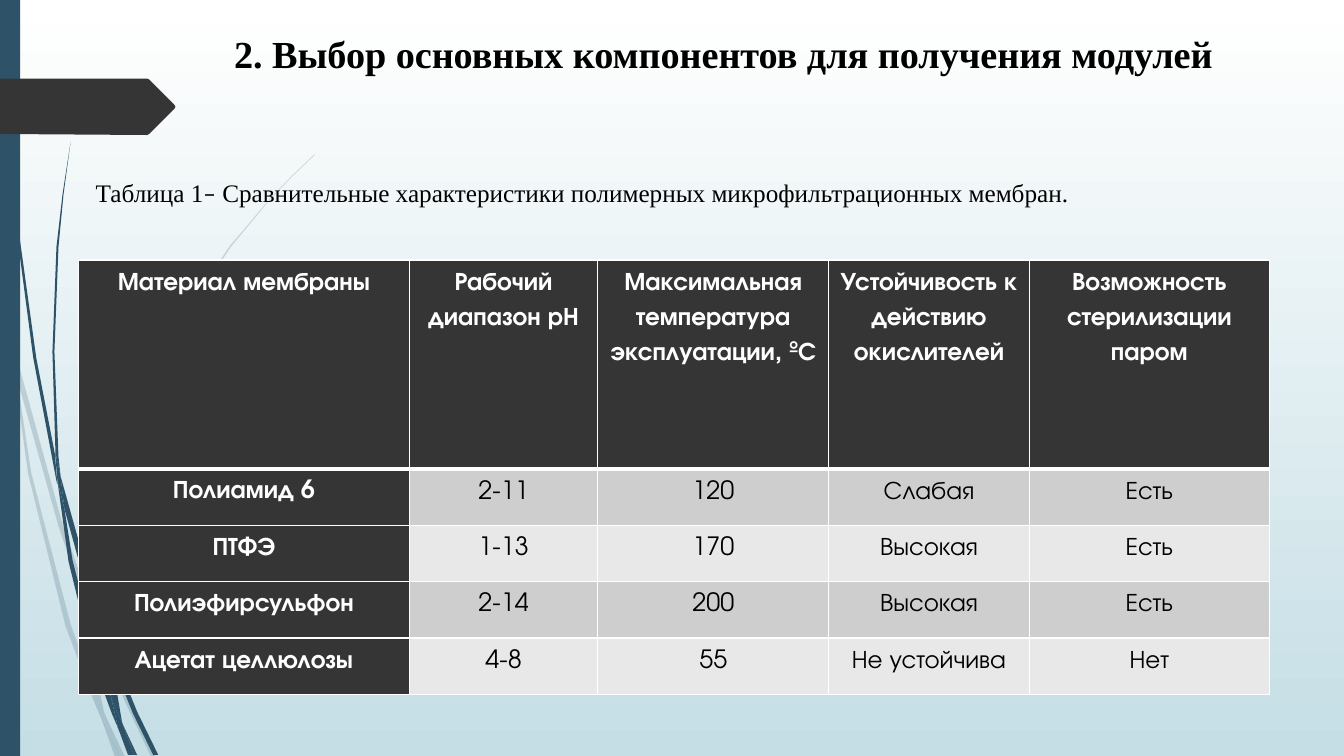
from lxml import etree
from pptx import Presentation
from pptx.dml.color import RGBColor
from pptx.enum.shapes import MSO_SHAPE
from pptx.enum.text import MSO_ANCHOR, MSO_AUTO_SIZE, PP_ALIGN
from pptx.oxml.ns import qn
from pptx.util import Pt

RECT = MSO_SHAPE.RECTANGLE
CENTER, LEFT = PP_ALIGN.CENTER, PP_ALIGN.LEFT
TOP, MIDDLE = MSO_ANCHOR.TOP, MSO_ANCHOR.MIDDLE
NONE, GROW = MSO_AUTO_SIZE.NONE, MSO_AUTO_SIZE.SHAPE_TO_FIT_TEXT
PX = 9144  # 100 px to the inch

THEME = {
    "sky": ("FFFFFF", "C5DEE5"), "blue": "2E5369", "dark": "353535",
    "bands": ("CECECE", "E8E8E8"), "ink": "000000", "white": "FFFFFF",
    "serif": "Times New Roman", "sans": "TeX Gyre Adventor", "dash": "Calibri",
    "title": 27.3, "body": 18, "thin": 1, "thick": 3,
}

SIZE = (1333, 750)
TITLE = "2. Выбор основных компонентов для получения модулей"
TITLE_BOX = (177, 25, 1081, 59)
CAPTION = [
    ("Таблица 1", "serif"), ("–", "dash"),
    (" Сравнительные характеристики полимерных микрофильтрационных мембран.", "serif"),
]
CAPTION_BOX = (85, 171, 1052, 40)

ROWS = [
    ("Материал мембраны", "Рабочий диапазон рН", "Максимальная температура эксплуатации, ºС",
     "Устойчивость к действию окислителей", "Возможность стерилизации паром"),
    ("Полиамид 6", "2-11", "120", "Слабая", "Есть"),
    ("ПТФЭ", "1-13", "170", "Высокая", "Есть"),
    ("Полиэфирсульфон", "2-14", "200", "Высокая", "Есть"),
    ("Ацетат целлюлозы", "4-8", "55", "Не устойчива", "Нет"),
]
TABLE_AT = (78, 258)
WIDTHS = (328, 187, 229, 199, 238)
HEAD_H, ROW_H = 207, 56
PAD = 7

BAR = (0, 0, 20, 750)
ARROW = (0, 78, 146, 78, 148, 79, 173, 104, 174, 106, 173, 108, 148, 133, 146, 134, 0, 133)

# Outlines as x, y pairs
PALE = [
    (11, 350, 9, 322, 0, 282, 0, 299, 10, 344),
    (58, 522, 84, 599, 85, 586, 62, 520, 14, 345, 17, 376),
    (92, 607, 88, 596, 88, 610, 123, 694, 150, 751, 155, 751, 127, 692),
    (119, 751, 124, 751, 105, 711),
    (93, 683, 70, 619, 31, 469, 17, 376, 11, 350, 28, 470, 65, 621, 92, 693,
     101, 714, 99, 707),
    (84, 599, 87, 646, 93, 683, 96, 692, 105, 711, 103, 706, 91, 646, 88, 610, 88, 608),
    (88, 584, 110, 462, 160, 349, 229, 245, 268, 198, 290, 175, 312, 154, 312, 153,
     289, 175, 268, 197, 228, 244, 158, 348, 107, 461, 85, 584, 85, 586, 88, 596),
    (101, 714, 114, 751, 119, 751),
    (88, 608, 88, 610, 88, 596, 85, 586, 84, 599),
    (96, 692, 93, 683, 99, 707, 101, 714, 119, 751, 105, 711),
]
DEEP = [
    (7, 110, 17, 233, 33, 355, 56, 477, 57, 481, 55, 457, 55, 453, 36, 355, 19, 232,
     8, 109, 5, 48, 4, 0, 3, 0, 4, 48),
    (88, 592, 106, 645, 106, 633, 106, 631, 93, 590, 60, 472, 64, 505),
    (113, 649, 110, 641, 111, 656, 132, 708, 152, 749, 157, 749, 136, 706),
    (110, 691, 98, 657, 72, 556, 64, 505, 57, 477, 68, 557, 93, 659, 111, 708,
     117, 722, 116, 717),
    (60, 472, 58, 453, 54, 349, 58, 245, 63, 193, 70, 141, 62, 193, 56, 245,
     52, 349, 55, 449),
    (133, 749, 136, 749, 122, 719),
    (57, 477, 64, 505, 60, 472, 55, 449, 55, 453),
    (111, 633, 125, 552, 158, 476, 205, 406, 231, 374, 245, 359, 261, 344, 260, 344,
     245, 358, 231, 373, 204, 405, 156, 474, 122, 551, 106, 631, 110, 641),
    (117, 722, 127, 749, 131, 749),
    (106, 645, 110, 691, 116, 706, 122, 719, 121, 716, 111, 656, 109, 651),
    (106, 645, 109, 651, 111, 656, 110, 641, 106, 631, 106, 633),
    (116, 706, 110, 691, 116, 717, 117, 722, 130, 749, 133, 749, 122, 719),
]


def apply(thing, values):
    for name, value in values.items():
        setattr(thing, name, value)


def scale(lengths):
    return [n * PX for n in lengths]


def paint(shape, color, alpha=None):
    """Give a shape a plain fill, no line and no shadow."""
    shape.shadow.inherit = False
    shape.line.fill.background()
    shape.fill.solid()
    shape.fill.fore_color.rgb = RGBColor.from_string(color)
    if alpha:
        tint = shape.fill._xPr.find(".//" + qn("a:srgbClr"))
        etree.SubElement(tint, qn("a:alpha"), val=str(alpha * 1000))


def outline(shapes, flat, color, alpha=None):
    dots = list(zip(flat[::2], flat[1::2]))
    pen = shapes.build_freeform(*dots[0], scale=PX)
    pen.add_line_segments(dots[1:], close=True)
    paint(pen.convert_to_shape(), color, alpha)


def write(para, text, face, size, color, bold=False):
    run = para.add_run()
    run.text = text
    apply(run.font, {"name": THEME[face], "size": Pt(size), "bold": bold})
    run.font.color.rgb = RGBColor.from_string(THEME[color])


def add_text(slide, box, runs, size, align, frame, bold=False):
    body = slide.shapes.add_textbox(*scale(box)).text_frame
    apply(body, {"word_wrap": True, **frame})
    para = body.paragraphs[0]
    para.alignment = align
    for text, face in runs:
        write(para, text, face, THEME[size], "ink", bold)


def edge(cell, widths):
    """Draw the cell's borders; widths maps a side to points."""
    props = cell._tc.get_or_add_tcPr()
    for side, width in widths.items():
        line = etree.SubElement(props, qn("a:ln" + side), w=str(Pt(width)))
        fill = etree.SubElement(line, qn("a:solidFill"))
        etree.SubElement(fill, qn("a:srgbClr"), val=THEME["white"])


def add_grid(slide):
    heights = [HEAD_H] + [ROW_H] * (len(ROWS) - 1)
    box = scale((*TABLE_AT, sum(WIDTHS), sum(heights)))
    table = slide.shapes.add_table(len(ROWS), len(WIDTHS), *box).table
    for col, width in zip(table.columns, scale(WIDTHS)):
        col.width = width
    thin, thick = THEME["thin"], THEME["thick"]
    for r, (texts, height) in enumerate(zip(ROWS, scale(heights))):
        table.rows[r].height = height
        for c, text in enumerate(texts):
            cell = table.cell(r, c)
            head = r == 0 or c == 0
            apply(cell, {"margin_left": PAD * PX, "margin_right": PAD * PX,
                         "margin_top": 0, "margin_bottom": 0})
            edge(cell, {"L": thin, "R": thin, "T": thick if r == 1 else thin,
                        "B": thick if r == 0 else thin})
            cell.fill.solid()
            shade = THEME["dark"] if head else THEME["bands"][(r - 1) % 2]
            cell.fill.fore_color.rgb = RGBColor.from_string(shade)
            para = cell.text_frame.paragraphs[0]
            apply(para, {"alignment": CENTER, "line_spacing": 1.5})
            write(para, text, "sans", THEME["body"], "white" if head else "ink", head)


def add_back(slide):
    fill = slide.background.fill
    fill.gradient()
    fill.gradient_angle = 270
    for stop, color, place in zip(fill.gradient_stops, THEME["sky"], (0, 1)):
        stop.color.rgb = RGBColor.from_string(color)
        stop.position = place
    for strands, alpha in ((PALE, 20), (DEEP, None)):
        group = slide.shapes.add_group_shape()
        for flat in strands:
            outline(group.shapes, flat, THEME["blue"], alpha)
    paint(slide.shapes.add_shape(RECT, *scale(BAR)), THEME["blue"])
    outline(slide.shapes, ARROW, THEME["dark"])


def main():
    deck = Presentation()
    deck.slide_width, deck.slide_height = scale(SIZE)
    slide = deck.slides.add_slide(deck.slide_layouts[6])
    add_back(slide)
    add_text(slide, TITLE_BOX, [(TITLE, "serif")], "title", CENTER,
             {"vertical_anchor": TOP, "auto_size": NONE}, True)
    add_grid(slide)
    add_text(slide, CAPTION_BOX, CAPTION, "body", LEFT,
             {"vertical_anchor": MIDDLE, "auto_size": GROW})
    deck.save("out.pptx")


if __name__ == "__main__":
    main()
